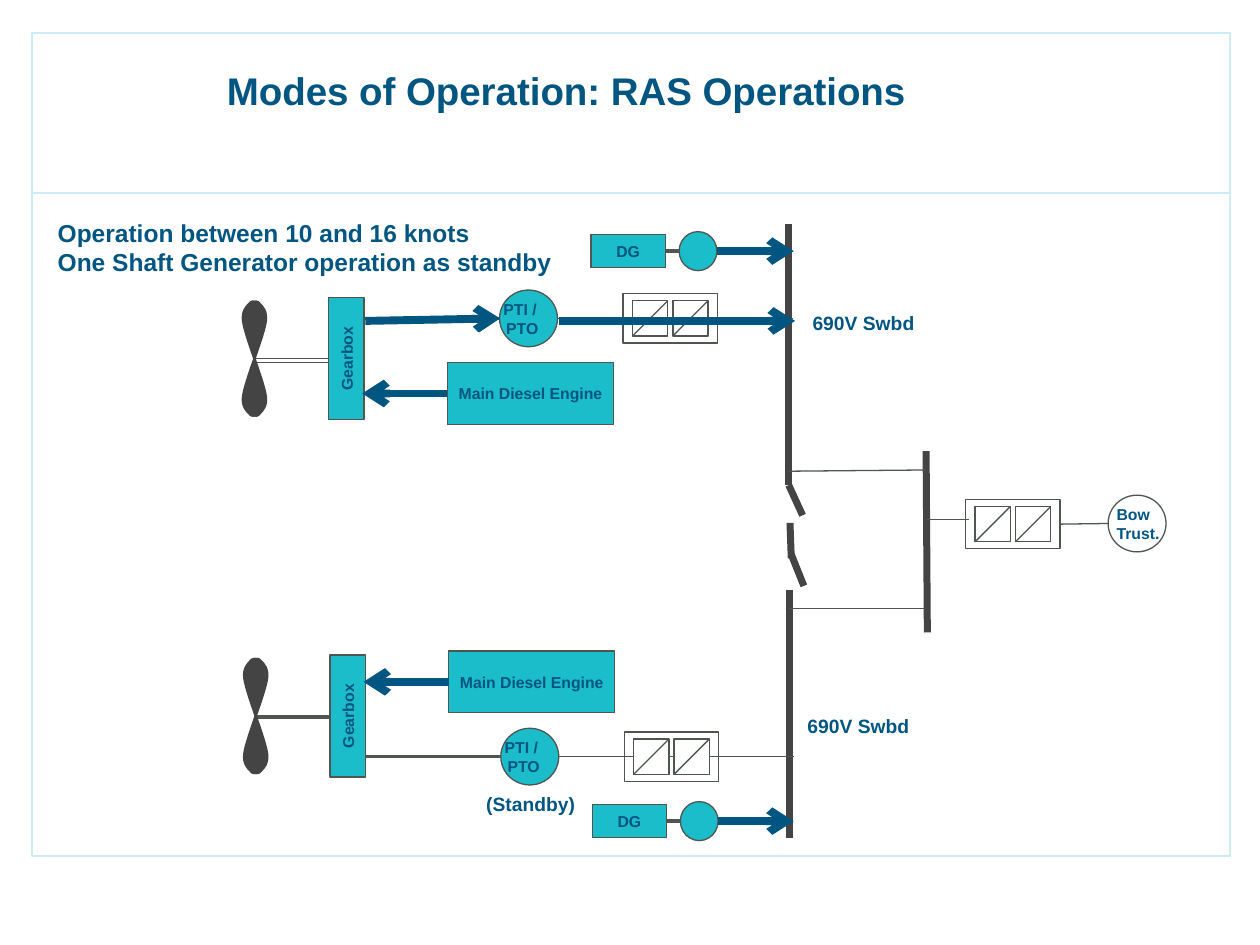
from dataclasses import dataclass
from typing import Optional

from lxml.etree import SubElement
from pptx import Presentation
from pptx.dml.color import RGBColor
from pptx.enum.shapes import MSO_CONNECTOR, MSO_SHAPE
from pptx.enum.text import MSO_ANCHOR, MSO_AUTO_SIZE, PP_ALIGN
from pptx.oxml.ns import qn
from pptx.util import Inches, Pt

NAVY = RGBColor(0x00, 0x55, 0x81)
TEAL = RGBColor(0x1A, 0xBD, 0xC9)
GREY = RGBColor(0x4F, 0x56, 0x50)
DARK = RGBColor(0x44, 0x44, 0x44)
PALE = RGBColor(0xCB, 0xED, 0xF3)
WHITE = RGBColor(0xFF, 0xFF, 0xFF)

prs = Presentation()
prs.slide_width, prs.slide_height = Inches(10), Inches(7.5)
s = prs.slides.add_slide(prs.slide_layouts[6])
COL = prs.slide_width / 100
ROW = prs.slide_height / 75


@dataclass
class Plant:
    """One shaft line: its column shift and the centre row of each part."""
    shift: float
    shaft: float
    gap: float
    machine: float
    engine: float
    diesel: float
    running: bool


@dataclass
class Stroke:
    """A straight line in columns and rows."""
    x1: float
    y1: float
    x2: float
    y2: float


PLANTS = [
    Plant(0, 28.47, 0.3, 25.27, 31.23, 19.93, True),
    Plant(0.1, 56.83, 0.15, 60.05, 54.12, 65.17, False),
]
BUSBARS = [
    Stroke(62.6, 17.8, 62.6, 38.5),
    Stroke(62.6, 38.5, 63.7, 40.9),
    Stroke(62.7, 41.5, 62.8, 44.3),
    Stroke(62.8, 44, 63.8, 46.5),
    Stroke(62.7, 46.8, 62.7, 66.5),
    Stroke(73.5, 35.8, 73.6, 50.2),
]
FEEDERS = [
    Stroke(62.6, 37.4, 73.5, 37.3),
    Stroke(62.6, 48.3, 73.5, 48.3),
    Stroke(73.5, 41.25, 76.9, 41.25),
]
BLADE = [
    (0.2, 4.6), (-0.1, 4.6), (-0.3, 4.7), (-0.5, 4.4),
    (-0.7, 4.2), (-1.1, 3.8), (-1, 3),
    (-0.9, 2.2), (-0.2, 0.3), (0, -0.3),
    (0.1, -0.9), (0.1, -0.6), (0, -0.4),
]


def x(col: float) -> int:
    """Turn columns into a length."""
    return round(col * COL)


def y(row: float) -> int:
    """Turn rows into a length."""
    return round(row * ROW)


def write(sp, text: str, size: float = 9, align=PP_ALIGN.CENTER, anchor=MSO_ANCHOR.MIDDLE,
          ins=(1, 0.5, 1, 0.5), wrap: bool = False, vert: Optional[str] = None) -> None:
    """Fill a shape with bold text, one paragraph a line."""
    tf = sp.text_frame
    tf.word_wrap, tf.vertical_anchor = wrap, anchor
    tf.margin_left, tf.margin_right = x(ins[0]), x(ins[2])
    tf.margin_top, tf.margin_bottom = y(ins[1]), y(ins[3])
    if vert:
        tf._txBody.bodyPr.set("vert", vert)
    for i, line_text in enumerate(text.split("\n")):
        p = tf.add_paragraph() if i else tf.paragraphs[0]
        p.alignment = align
        r = p.add_run()
        r.text = line_text
        r.font.name, r.font.size, r.font.bold = "Arial", Pt(size), True
        r.font.color.rgb = NAVY


def label(text: str, left: float, top: float, w: float, h: float, grow: bool = True, **fmt):
    """Add a text box anchored at the top."""
    sp = s.shapes.add_textbox(x(left), y(top), x(w), y(h))
    write(sp, text, anchor=MSO_ANCHOR.TOP, **fmt)
    if grow:
        sp.text_frame.auto_size = MSO_AUTO_SIZE.SHAPE_TO_FIT_TEXT


def shape(left: float, mid: float, w: float, h: float, fill: Optional[RGBColor] = TEAL,
          kind=MSO_SHAPE.RECTANGLE, line_color: RGBColor = GREY, width: float = 0.75):
    """Add a preset shape centred on a row."""
    sp = s.shapes.add_shape(kind, x(left), y(mid - h / 2), x(w), y(h))
    sp.shadow.inherit = False
    if fill is None:
        sp.fill.background()
    else:
        sp.fill.solid()
        sp.fill.fore_color.rgb = fill
    sp.line.color.rgb, sp.line.width = line_color, Pt(width)
    return sp


def line(k: Stroke, color: RGBColor = GREY, width: float = 0.75, start=None, side: int = 3):
    """Add a straight connector, joined to a start shape if one is given."""
    c = s.shapes.add_connector(MSO_CONNECTOR.STRAIGHT, x(k.x1), y(k.y1), x(k.x2), y(k.y2))
    if start is not None:
        c.begin_connect(start, side)
    c.line.color.rgb, c.line.width = color, Pt(width)
    SubElement(c._element.spPr, qn("a:effectLst"))
    return c


def arrow(k: Stroke, **joint) -> None:
    """Add a thick power-flow arrow."""
    c = line(k, NAVY, 4.5, **joint)
    SubElement(c.line._get_or_add_ln(), qn("a:tailEnd"), type="arrow")


def curve(sp) -> None:
    """Turn each three straight segments of a freeform into one cubic curve."""
    segments = list(sp._element.iter(qn("a:lnTo")))
    for first, second, third in zip(*[iter(segments)] * 3):
        first.tag = qn("a:cubicBezTo")
        for other in (second, third):
            first.append(other[0])
            other.getparent().remove(other)


def propeller(col: float, row: float) -> None:
    """Draw four mirrored half blades around a hub."""
    group = s.shapes.add_group_shape()
    for sy in (-1, 1):
        for sx in (1, -1):
            pts = [(x(col + sx * a), y(row + sy * b)) for a, b in BLADE]
            fb = group.shapes.build_freeform(*pts[0])
            fb.add_line_segments(pts[1:], close=False)
            sp = fb.convert_to_shape()
            curve(sp)
            sp.shadow.inherit = False
            sp.fill.solid()
            sp.fill.fore_color.rgb = DARK
            sp.line.fill.background()


def converter(left: float, mid: float):
    """Draw a framed pair of crossed converter cells."""
    for cell in (left + 0.75, left + 3.95):
        shape(cell, mid, 2.8, 2.8, WHITE)
        line(Stroke(cell + 2.8, mid - 1.4, cell, mid + 1.4))
    return shape(left, mid, 7.5, 3.9, None)


def plant(pl: Plant) -> None:
    """Draw one shaft line with its machine, engine and diesel generator."""
    dx, m = pl.shift, pl.machine
    line(Stroke(39.7 + dx, m, 28.3 + dx, m), width=2)
    line(Stroke(62.9 + dx, m, 44.2 + dx, m))
    gearbox = shape(26.1 + dx, pl.shaft, 2.8, 9.7)
    write(gearbox, "Gearbox", vert="vert270")
    line(Stroke(26.1, pl.shaft, 20.3 + dx, pl.shaft), start=gearbox, side=1)
    line(Stroke(26.1, pl.shaft + pl.gap, 20.3, pl.shaft + pl.gap))
    propeller(20.2 + dx, pl.shaft)
    engine = shape(35.5 + dx, pl.engine, 13.2, 4.9)
    write(engine, "Main Diesel Engine")
    arrow(Stroke(35.5, pl.engine, 28.75 + dx, pl.engine), start=engine, side=1)
    write(shape(39.65 + dx, m, 4.6, 4.5, kind=MSO_SHAPE.OVAL), "PTI / \nPTO", ins=(0, 0.5, 1, 0.5))
    converter(49.45 + dx, m)
    dg = shape(46.9 + dx, pl.diesel, 5.9, 2.6)
    write(dg, "DG")
    shape(53.9 + dx, pl.diesel, 3, 3.1, kind=MSO_SHAPE.OVAL)
    line(Stroke(52.8, pl.diesel, 53.9 + dx, pl.diesel), width=2, start=dg)
    arrow(Stroke(56.9 + dx, pl.diesel, 63, pl.diesel))
    if pl.running:
        arrow(Stroke(29, m + 0.2, 39.7, m))
        arrow(Stroke(44.35, m + 0.2, 63.1, m + 0.2))


def main() -> None:
    """Build the slide and save it."""
    shape(2.54, 35.27, 95.1, 65.3, None, line_color=PALE, width=1)
    line(Stroke(2.54, 15.3, 97.6, 15.3), PALE, 1)
    label("Modes of Operation: RAS Operations", 10.75, 5.35, 68.4, 5.4, grow=False,
          size=22, ins=(0, 0, 0, 0), wrap=True)
    label("Operation between 10 and 16 knots\nOne Shaft Generator operation as standby",
          3.6, 16.8, 91.3, 5.7, size=14, align=PP_ALIGN.LEFT, wrap=True)
    for bar in BUSBARS:
        line(bar, DARK, 4)
    for feeder in FEEDERS:
        line(feeder)
    for pl in PLANTS:
        plant(pl)
    bow = converter(76.64, 41.6)
    write(shape(87.95, 41.55, 4.6, 4.5, WHITE, MSO_SHAPE.OVAL), "Bow\nTrust.",
          align=PP_ALIGN.LEFT, ins=(0, 0.5, 1, 0.5))
    line(Stroke(84.1, 41.6, 87.95, 41.55), start=bow)
    for text, left, top, w in (("690V Swbd", 63.5, 24.2, 10.2), ("690V Swbd", 63.1, 56.2, 10.2),
                               ("(Standby)", 37.6, 62.4, 9.1)):
        label(text, left, top, w, 2.9, size=11, align=PP_ALIGN.LEFT)
    prs.save("out.pptx")


if __name__ == "__main__":
    main()
